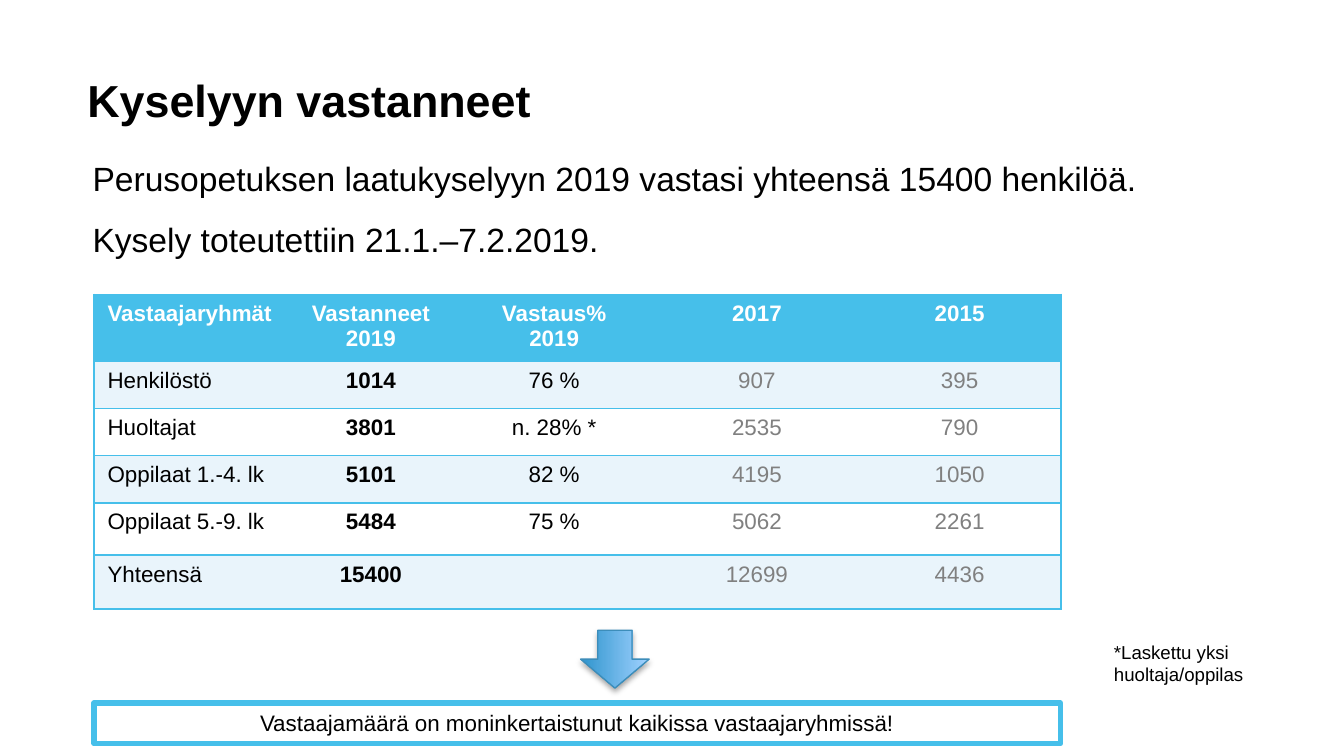
import pptx
import pptx.dml.color
import pptx.enum.shapes
import pptx.enum.text
import pptx.oxml
import pptx.oxml.ns
import pptx.util

Pt = pptx.util.Pt
ALIGN = pptx.enum.text.PP_ALIGN
ANCHOR = pptx.enum.text.MSO_ANCHOR
AUTO_SIZE = pptx.enum.text.MSO_AUTO_SIZE
SHAPE = pptx.enum.shapes.MSO_SHAPE

FONT = "Arial"
BLACK, WHITE, GREY = "000000", "FFFFFF", "808080"
ACCENT, BAND = "46BFEA", "E9F4FB"

COLUMN_WIDTHS = [104.4, 87.8, 108.6, 108.6, 108.6]
ROW_HEIGHTS = [25.2, 25.2, 25.2, 25.2, 28.1, 28.1]
RESPONDENTS = [
    ["Vastaajaryhmät", "Vastanneet\n2019", "Vastaus%\n2019", "2017", "2015"],
    ["Henkilöstö", "1014", "76 %", "907", "395"],
    ["Huoltajat", "3801", "n. 28% *", "2535", "790"],
    ["Oppilaat 1.-4. lk", "5101", "82 %", "4195", "1050"],
    ["Oppilaat 5.-9. lk", "5484", "75 %", "5062", "2261"],
    ["Yhteensä", "15400", "", "12699", "4436"],
]


def color(value):
    """Return the colour for a hex string."""
    return pptx.dml.color.RGBColor.from_string(value)


def write(frame, text, size=12, fill=BLACK, bold=False, align=ALIGN.LEFT,
          line_spacing=None, space_after=0):
    """Write text into a frame, one paragraph for each line."""
    for index, line in enumerate(text.split("\n")):
        paragraph = frame.add_paragraph() if index else frame.paragraphs[0]
        paragraph.alignment = align
        paragraph.space_before = Pt(0)
        paragraph.space_after = Pt(space_after)
        if line_spacing:
            paragraph.line_spacing = Pt(line_spacing)
        if line:
            run = paragraph.add_run()
            run.text = line
            run.font.name = FONT
            run.font.size = Pt(size)
            run.font.bold = bold
            run.font.color.rgb = color(fill)


def border_cell(cell, visible):
    """Draw the named sides of a cell and clear the others."""
    properties = cell._tc.get_or_add_tcPr()
    for index, side in enumerate("LRTB"):
        paint = (f'<a:solidFill><a:srgbClr val="{ACCENT}"/></a:solidFill>'
                 if side in visible else "<a:noFill/>")
        properties.insert(index, pptx.oxml.parse_xml(
            f'<a:ln{side} {pptx.oxml.ns.nsdecls("a")} w="12700">{paint}</a:ln{side}>'))


class SlideBuilder:
    """Hold the style and the current slide."""

    def __init__(self, presentation):
        """Add a title-only slide."""
        self.slide = presentation.slides.add_slide(presentation.slide_layouts[5])

    def title(self, text, left, top, width, height):
        """Place and format the title."""
        shape = self.slide.shapes.title
        shape.left, shape.top = Pt(left), Pt(top)
        shape.width, shape.height = Pt(width), Pt(height)
        frame = shape.text_frame
        frame.margin_left = frame.margin_top = frame.margin_bottom = 0
        frame.margin_right = Pt(7.2)
        frame.vertical_anchor = ANCHOR.BOTTOM
        frame.auto_size = AUTO_SIZE.NONE
        write(frame, text, size=24, bold=True, line_spacing=33)

    def text(self, text, left, top, width, height, **style):
        """Add a wrapping text box."""
        shape = self.slide.shapes.add_textbox(Pt(left), Pt(top), Pt(width), Pt(height))
        shape.text_frame.word_wrap = True
        write(shape.text_frame, text, **style)

    def table(self, rows, left, top, height):
        """Add the banded table with its header row."""
        frame = self.slide.shapes.add_table(
            len(rows), len(COLUMN_WIDTHS), Pt(left), Pt(top),
            Pt(sum(COLUMN_WIDTHS)), Pt(height))
        table = frame.table
        for column, width in zip(table.columns, COLUMN_WIDTHS):
            column.width = Pt(width)
        for row, row_height in zip(table.rows, ROW_HEIGHTS):
            row.height = Pt(row_height)
        frame.height = Pt(height)
        last = len(COLUMN_WIDTHS) - 1
        for i, row in enumerate(rows):
            for j, text in enumerate(row):
                cell = table.cell(i, j)
                cell.fill.solid()
                cell.fill.fore_color.rgb = color(
                    ACCENT if i == 0 else BAND if i % 2 else WHITE)
                write(cell.text_frame, text, bold=i == 0 or j == 1,
                      fill=WHITE if i == 0 else GREY if j > 2 else BLACK,
                      align=ALIGN.CENTER if j else ALIGN.LEFT)
                border_cell(cell, "TB" + "L" * (j == 0) + "R" * (j == last))

    def banner(self, text, left, top, width, height):
        """Add an outlined box with centred text."""
        shape = self.slide.shapes.add_shape(
            SHAPE.RECTANGLE, Pt(left), Pt(top), Pt(width), Pt(height))
        shape.shadow.inherit = False
        shape.fill.background()
        shape.line.color.rgb = color(ACCENT)
        shape.line.width = Pt(3)
        shape.text_frame.word_wrap = True
        shape.text_frame.auto_size = AUTO_SIZE.SHAPE_TO_FIT_TEXT
        shape.text_frame.vertical_anchor = ANCHOR.TOP
        write(shape.text_frame, text, align=ALIGN.CENTER)

    def down_arrow(self, left, top, width, height):
        """Add a shaded arrow turned to point down."""
        shape = self.slide.shapes.add_shape(
            SHAPE.RIGHT_ARROW, Pt(left), Pt(top), Pt(width), Pt(height))
        shape.rotation = 90
        shape.fill.gradient()
        shape.fill.gradient_angle = 90
        for stop, position, value in zip(
                shape.fill.gradient_stops, (0, 1), ("2E94CD", "A1D2FF")):
            stop.position = position
            stop.color.rgb = color(value)
        shape.line.color.rgb = color("3C8DBA")
        shape.line.width = Pt(0.75)
        shape.shadow.inherit = False
        effects = shape._element.spPr.find(pptx.oxml.ns.qn("a:effectLst"))
        effects.append(pptx.oxml.parse_xml(
            f'<a:outerShdw {pptx.oxml.ns.nsdecls("a")} blurRad="{Pt(3.1)}" '
            f'dist="{Pt(1.8)}" dir="5400000" rotWithShape="0">'
            f'<a:srgbClr val="{BLACK}"><a:alpha val="35000"/></a:srgbClr></a:outerShdw>'))


def main():
    """Build and save the presentation."""
    presentation = pptx.Presentation()
    presentation.slide_width, presentation.slide_height = Pt(720), Pt(405)
    builder = SlideBuilder(presentation)
    builder.text("Perusopetuksen laatukyselyyn 2019 vastasi yhteensä 15400 henkilöä.\n"
                 "Kysely toteutettiin 21.1.–7.2.2019.",
                 42.5, 81.4, 611.3, 61.2, size=18, line_spacing=21, space_after=12)
    builder.title("Kyselyyn vastanneet", 46.8, 24.5, 607, 43.2)
    builder.table(RESPONDENTS, 50.4, 157.7, 175.7)
    builder.banner("Vastaajamäärä on moninkertaistunut kaikissa vastaajaryhmissä!",
                   50.4, 376.6, 517.7, 21.8)
    builder.down_arrow(313.9, 334.8, 31, 36.7)
    builder.text("*Laskettu yksi huoltaja/oppilas", 589.7, 339.8, 114.5, 31.7, size=10)
    presentation.save("out.pptx")


if __name__ == "__main__":
    main()
